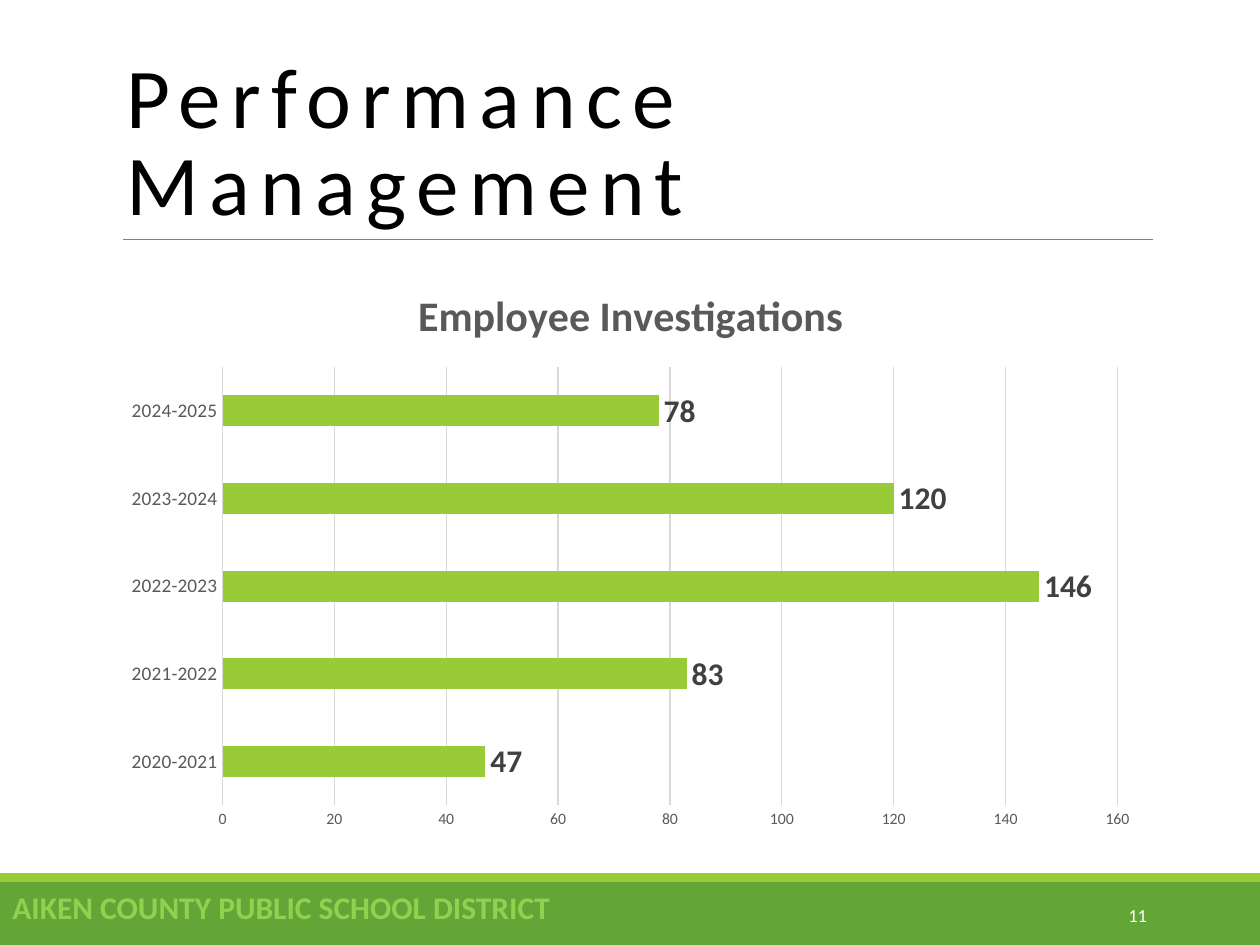
from lxml.etree import SubElement
from pptx import Presentation
from pptx.chart.data import CategoryChartData
from pptx.dml.color import RGBColor
from pptx.enum.chart import XL_CHART_TYPE as CT, XL_LABEL_POSITION as LP, XL_TICK_MARK as TM
from pptx.enum.shapes import MSO_CONNECTOR as MC, MSO_SHAPE as MS
from pptx.enum.text import MSO_ANCHOR as MA, PP_ALIGN as PA
from pptx.oxml.ns import qn
from pptx.util import Inches, Pt


def rgb(value):
    """Turn a hex string into a colour."""
    return RGBColor.from_string(value)


def assign(obj, **values):
    """Set attributes of an object from a dict of values."""
    for name, value in values.items():
        setattr(obj, name, value)


class Deck:
    """Hold the style and the current slide."""

    font = "Calibri"
    black, white, grey = "000000", "FFFFFF", "808080"
    label, value, grid = "595959", "404040", "D9D9D9"
    green, lime, bright = "63A537", "99CB38", "92D050"

    def __init__(self, prs):
        """Start a slide with a title only."""
        self.s = prs.slides.add_slide(prs.slide_layouts[5])

    def style(self, font, size, color, bold=False):
        """Apply the deck font with a size, colour and weight."""
        assign(font, name=self.font, size=Pt(size), bold=bold)
        font.color.rgb = rgb(color)

    def stroke(self, line, color, width):
        """Colour a line and set its width in points."""
        line.color.rgb = rgb(color)
        line.width = Pt(width)

    def title(self, text, box, size, spacing):
        """Fill and move the title placeholder."""
        sp = self.s.shapes.title
        assign(sp, **dict(zip(("left", "top", "width", "height"), map(Inches, box))))
        tf = sp.text_frame
        assign(tf, text=text, word_wrap=True, vertical_anchor=MA.BOTTOM)
        p = tf.paragraphs[0]
        assign(p, alignment=PA.LEFT, line_spacing=0.85)
        r = p.runs[0]
        self.style(r.font, size, self.black)
        r.font._element.set("spc", str(spacing * 100))

    def text(self, text, box, size, color, bold=False, align=PA.LEFT, anchor=MA.TOP):
        """Add a text box with one line."""
        tf = self.s.shapes.add_textbox(*map(Inches, box)).text_frame
        assign(tf, text=text, word_wrap=True, vertical_anchor=anchor)
        p = tf.paragraphs[0]
        p.alignment = align
        self.style(p.runs[0].font, size, color, bold)

    def band(self, box, color):
        """Add a filled rectangle without outline."""
        sp = self.s.shapes.add_shape(MS.RECTANGLE, *map(Inches, box))
        sp.shadow.inherit = False
        sp.fill.solid()
        sp.fill.fore_color.rgb = rgb(color)
        sp.line.fill.background()

    def rule(self, ends, color, width):
        """Add a straight line."""
        line = self.s.shapes.add_connector(MC.STRAIGHT, *map(Inches, ends))
        self.stroke(line.line, color, width)
        SubElement(line._element.spPr, qn("a:effectLst"))

    def bar_chart(self, title, values, box, top, step):
        """Add a horizontal bar chart with value labels."""
        data = CategoryChartData()
        data.categories = list(values)
        data.add_series("Series 1", list(values.values()))
        chart = self.s.shapes.add_chart(CT.BAR_CLUSTERED, *map(Inches, box), data).chart
        self.style(chart.font, 10, self.black)
        assign(chart, has_legend=False, has_title=True)
        tf = chart.chart_title.text_frame
        tf.text = title
        self.style(tf.paragraphs[0].runs[0].font, 24, self.label, True)

        cat, val = chart.category_axis, chart.value_axis
        for axis, size in ((cat, 11), (val, 9)):
            assign(axis, major_tick_mark=TM.NONE, minor_tick_mark=TM.NONE)
            self.style(axis.tick_labels.font, size, self.label)
        self.stroke(cat.format.line, self.grid, 0.75)
        assign(val, minimum_scale=0, maximum_scale=top, major_unit=step, has_major_gridlines=True)
        val.format.line.fill.background()
        self.stroke(val.major_gridlines.format.line, self.grid, 0.75)

        plot = chart.plots[0]
        assign(plot, gap_width=182, vary_by_categories=False, has_data_labels=True)
        assign(plot.data_labels, show_value=True, position=LP.OUTSIDE_END)
        self.style(plot.data_labels.font, 18, self.value, True)
        fill = plot.series[0].format.fill
        fill.solid()
        fill.fore_color.rgb = rgb(self.lime)


def main():
    """Build and save the slide."""
    prs = Presentation()
    assign(prs, slide_width=Inches(10), slide_height=Inches(7.5))
    deck = Deck(prs)
    deck.band((0, 7, 10, 0.5), deck.green)
    deck.band((0, 6.93, 10, 0.07), deck.lime)
    deck.rule((0.98, 1.9, 9.15, 1.9), deck.grey, 0.5)
    deck.title("Performance Management", (0.9, 0.31, 8.25, 1.59), 48.6, 6)
    investigations = {"2020-2021": 47, "2021-2022": 83, "2022-2023": 146,
                      "2023-2024": 120, "2024-2025": 78}
    deck.bar_chart("Employee Investigations", investigations, (0.88, 2.07, 8.25, 4.6), 160, 20)
    deck.text("11", (8.12, 7.06, 1.08, 0.4), 10.5, deck.white, align=PA.RIGHT, anchor=MA.MIDDLE)
    deck.text("AIKEN COUNTY PUBLIC SCHOOL DISTRICT", (0, 7, 10, 0.4), 18, deck.bright, bold=True)
    prs.save("out.pptx")


if __name__ == "__main__":
    main()
